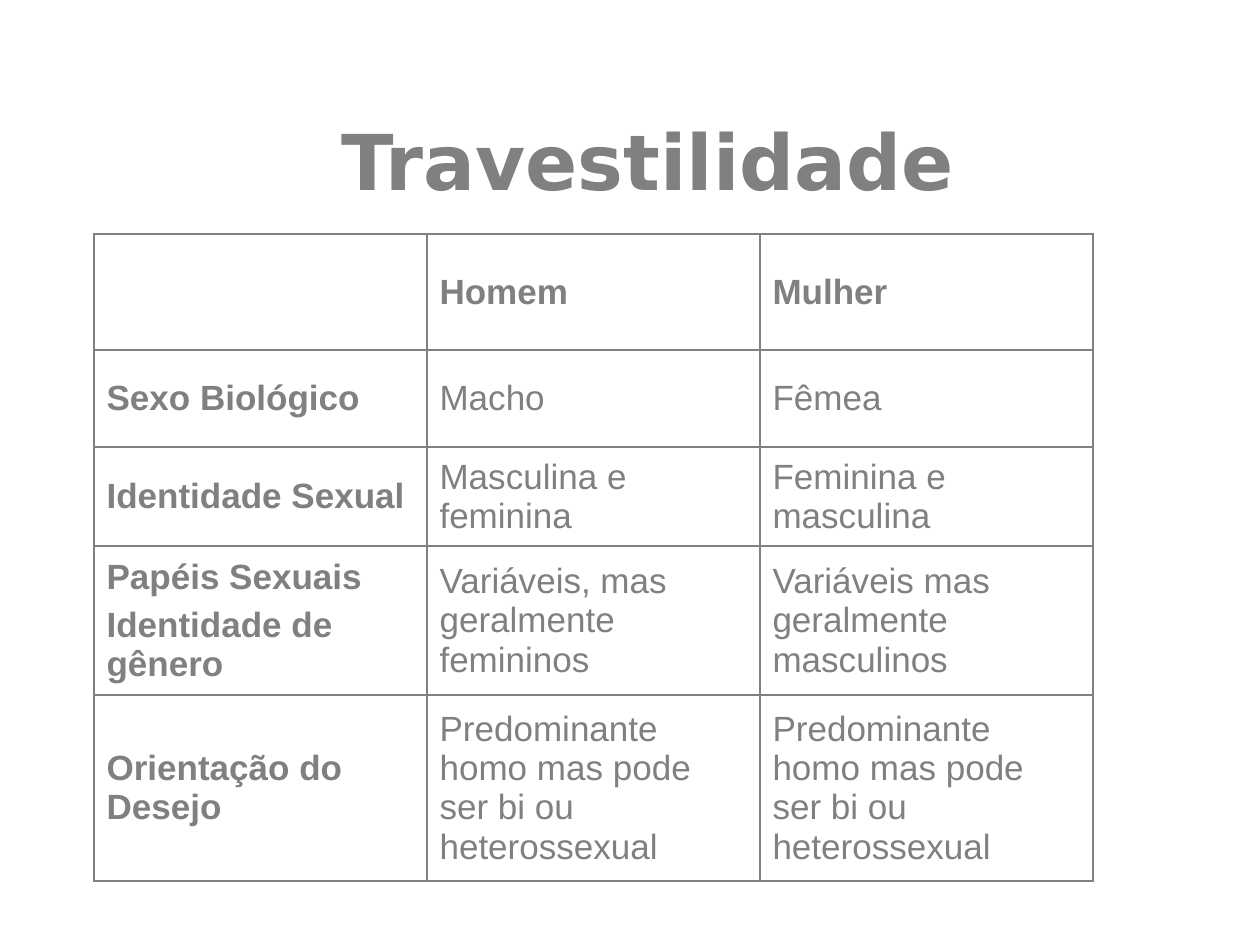
from dataclasses import dataclass

from lxml import etree
from pptx import Presentation, util as u
from pptx.dml.color import RGBColor
from pptx.enum import text as t
from pptx.oxml.ns import qn

EMU_PER_PX = 914400 / 126


@dataclass(frozen=True)
class Theme:
    grey: str = "808080"
    title_font: str = "DejaVu Sans"
    body_font: str = "Arial"
    title_size: int = 44
    body_size: int = 20
    border_pt: int = 1
    line_spacing: float = 1.01
    paragraph_gap: int = 5


@dataclass(frozen=True)
class Row:
    height: int
    label: tuple[str, ...]
    man: str
    woman: str


THEME = Theme()
COLUMN_WIDTH = 333
ORIENTATION = "Predominante homo mas pode ser bi ou heterossexual"
ROWS = [
    Row(116, (), "Homem", "Mulher"),
    Row(97, ("Sexo Biológico",), "Macho", "Fêmea"),
    Row(99, ("Identidade Sexual",), "Masculina e feminina", "Feminina e masculina"),
    Row(149, ("Papéis Sexuais", "Identidade de gênero"),
        "Variáveis, mas geralmente femininos", "Variáveis mas geralmente masculinos"),
    Row(186, ("Orientação do Desejo",), ORIENTATION, ORIENTATION),
]


def px(length: int) -> u.Emu:
    return u.Emu(round(length * EMU_PER_PX))


def add_run(paragraph, wording: str, font: str, size: int, bold: bool) -> None:
    run = paragraph.add_run()
    run.text = wording
    run.font.name = font
    run.font.size = u.Pt(size)
    run.font.bold = bold
    run.font.color.rgb = RGBColor.from_string(THEME.grey)


def add_borders(cell) -> None:
    properties = cell._tc.get_or_add_tcPr()
    for side in ("a:lnL", "a:lnR", "a:lnT", "a:lnB"):
        line = etree.SubElement(properties, qn(side), w=str(u.Pt(THEME.border_pt)))
        fill = etree.SubElement(line, qn("a:solidFill"))
        etree.SubElement(fill, qn("a:srgbClr"), val=THEME.grey)


def fill_cell(cell, paragraphs: tuple[str, ...], bold: bool) -> None:
    add_borders(cell)
    cell.fill.background()
    cell.vertical_anchor = t.MSO_ANCHOR.MIDDLE
    frame = cell.text_frame
    for index, wording in enumerate(paragraphs):
        paragraph = frame.add_paragraph() if index else frame.paragraphs[0]
        paragraph.line_spacing = THEME.line_spacing
        if index:
            paragraph.space_before = u.Pt(THEME.paragraph_gap)
        add_run(paragraph, wording, THEME.body_font, THEME.body_size, bold)


def add_title(slide, wording: str) -> None:
    title = slide.shapes.title
    title.left, title.top, title.width, title.height = map(px, (144, 96, 1008, 127))
    title.text_frame.vertical_anchor = t.MSO_ANCHOR.MIDDLE
    paragraph = title.text_frame.paragraphs[0]
    paragraph.alignment = t.PP_ALIGN.CENTER
    add_run(paragraph, wording, THEME.title_font, THEME.title_size, True)


def add_comparison(slide, rows: list[Row]) -> None:
    height = sum(row.height for row in rows)
    table = slide.shapes.add_table(
        len(rows), 3, px(94), px(234), px(3 * COLUMN_WIDTH), px(height)).table
    table.first_row = table.horz_banding = False
    for column in table.columns:
        column.width = px(COLUMN_WIDTH)
    for r, row in enumerate(rows):
        table.rows[r].height = px(row.height)
        for c, paragraphs in enumerate((row.label, (row.man,), (row.woman,))):
            fill_cell(table.cell(r, c), paragraphs, bold=r == 0 or c == 0)


def main() -> None:
    deck = Presentation()
    deck.slide_width, deck.slide_height = px(1260), px(945)
    slide = deck.slides.add_slide(deck.slide_layouts[5])
    add_title(slide, "Travestilidade")
    add_comparison(slide, ROWS)
    deck.save("out.pptx")


if __name__ == "__main__":
    main()
